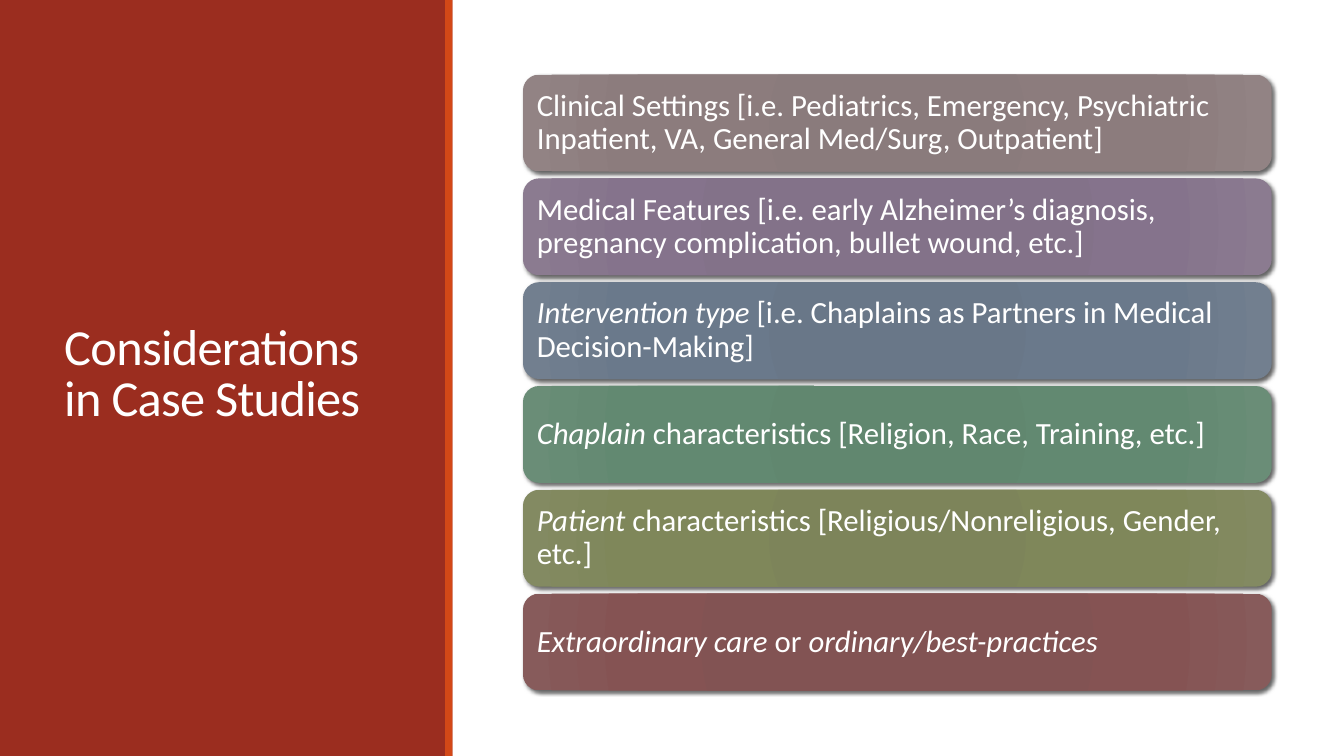
from dataclasses import dataclass

from lxml import etree
from pptx import Presentation
from pptx.dml.color import RGBColor
from pptx.enum import shapes, text
from pptx.oxml import ns, parse_xml
from pptx.util import Cm, Pt


@dataclass(frozen=True)
class Theme:
    font: str = "Calibri"
    title_size: int = 36
    card_size: int = 22
    background: str = "FFFFFF"
    ink: str = "FFFFFF"
    panel: str = "9B2D1F"
    stripe: str = "D34817"
    shadow: str = "000000"
    stops: tuple = (0, 34, 70, 100)
    cards: tuple = (
        ("89797A", "8A7B7C", "8C7C7D", "928384"),
        ("827188", "837289", "85738C", "8B7B90"),
        ("687688", "697788", "6A798B", "727F8F"),
        ("60866E", "61876F", "628971", "6A8D77"),
        ("7C8458", "7D845A", "7F875A", "838A62"),
        ("825151", "825353", "855353", "875B5B"),
    )


THEME = Theme()

CONSIDERATIONS = (
    (("Clinical Settings [i.e. Pediatrics, Emergency, Psychiatric Inpatient, "
      "VA, General Med/Surg, Outpatient]", False),),
    (("Medical Features [i.e. early Alzheimer’s diagnosis, pregnancy "
      "complication, bullet wound, etc.]", False),),
    (("Intervention type ", True),
     ("[i.e. Chaplains as Partners in Medical Decision-Making]", False)),
    (("Chaplain", True),
     (" characteristics [Religion, Race, Training, etc.]", False)),
    (("Patient ", True),
     ("characteristics [Religious/Nonreligious, Gender, etc.]", False)),
    (("Extraordinary care ", True), ("or ", False),
     ("ordinary/best-practices", True)),
)


def format_run(run, size, italic=False):
    run.font.name = THEME.font
    run.font.size = Pt(size)
    run.font.italic = italic
    run.font.color.rgb = RGBColor.from_string(THEME.ink)


def add_block(slide, left, top, width, height, color):
    block = slide.shapes.add_shape(
        shapes.MSO_SHAPE.RECTANGLE, left, top, width, height)
    block.shadow.inherit = False
    block.fill.solid()
    block.fill.fore_color.rgb = RGBColor.from_string(color)
    block.line.fill.background()


def add_radial_fill(card, colors):
    stops = "".join(
        f'<a:gs pos="{stop * 1000}"><a:srgbClr val="{color}"/></a:gs>'
        for stop, color in zip(THEME.stops, colors))
    gradient = parse_xml(
        f'<a:gradFill {ns.nsdecls("a")} rotWithShape="1">'
        f'<a:gsLst>{stops}</a:gsLst><a:path path="circle">'
        '<a:fillToRect l="100000" t="100000" r="100000" b="100000"/>'
        '</a:path></a:gradFill>')
    card._element.spPr.find(ns.qn("a:prstGeom")).addnext(gradient)


def add_soft_shadow(card):
    card.shadow.inherit = False
    effects = card._element.spPr.find(ns.qn("a:effectLst"))
    shadow = etree.SubElement(
        effects, ns.qn("a:outerShdw"), blurRad=str(Pt(3)), dist=str(Pt(2)),
        dir=str(45 * 60000), algn="ctr", rotWithShape="0")
    shade = etree.SubElement(shadow, ns.qn("a:srgbClr"), val=THEME.shadow)
    etree.SubElement(shade, ns.qn("a:alpha"), val="60000")


def add_title_panel(slide, left, top, width, height):
    stripe_width = Cm(0.18)
    add_block(slide, left, top, width, height, THEME.panel)
    add_block(slide, left + width - stripe_width, top, stripe_width, height,
              THEME.stripe)
    title = slide.shapes.add_textbox(
        left + Cm(1.37), top + Cm(1.45), Cm(8.56), Cm(16.03))
    frame = title.text_frame
    frame.word_wrap = True
    frame.vertical_anchor = text.MSO_ANCHOR.MIDDLE
    frame.text = "Considerations in Case Studies"
    heading = frame.paragraphs[0]
    heading.line_spacing = 0.85
    for run in heading.runs:
        format_run(run, THEME.title_size)
        run.font._element.set("spc", "-50")


def add_card(slide, left, top, width, height, phrases, colors):
    card = slide.shapes.add_shape(
        shapes.MSO_SHAPE.ROUNDED_RECTANGLE, left, top, width, height)
    card.line.fill.background()
    add_radial_fill(card, colors)
    add_soft_shadow(card)
    frame = card.text_frame
    frame.word_wrap = True
    frame.vertical_anchor = text.MSO_ANCHOR.MIDDLE
    frame.margin_left = frame.margin_right = Cm(0.23)
    frame.margin_top = frame.margin_bottom = Cm(0.23)
    consideration = frame.paragraphs[0]
    consideration.alignment = text.PP_ALIGN.LEFT
    consideration.line_spacing = 0.9
    for phrase, italic in phrases:
        run = consideration.add_run()
        run.text = phrase
        format_run(run, THEME.card_size, italic)


def add_considerations(slide, left, top, width, height):
    card_height = Cm(2.44)
    pitch = (height - card_height) / (len(CONSIDERATIONS) - 1)
    for row, (phrases, colors) in enumerate(zip(CONSIDERATIONS, THEME.cards)):
        add_card(slide, left, top + round(row * pitch), width, card_height,
                 phrases, colors)


def main():
    deck = Presentation()
    deck.slide_width = Cm(33.87)
    deck.slide_height = Cm(19.05)
    slide = deck.slides.add_slide(deck.slide_layouts[6])
    slide.background.fill.solid()
    slide.background.fill.fore_color.rgb = RGBColor.from_string(
        THEME.background)
    add_title_panel(slide, 0, 0, Cm(11.4), deck.slide_height)
    add_considerations(slide, Cm(13.18), Cm(1.88), Cm(18.87), Cm(15.52))
    deck.save("out.pptx")


if __name__ == "__main__":
    main()
